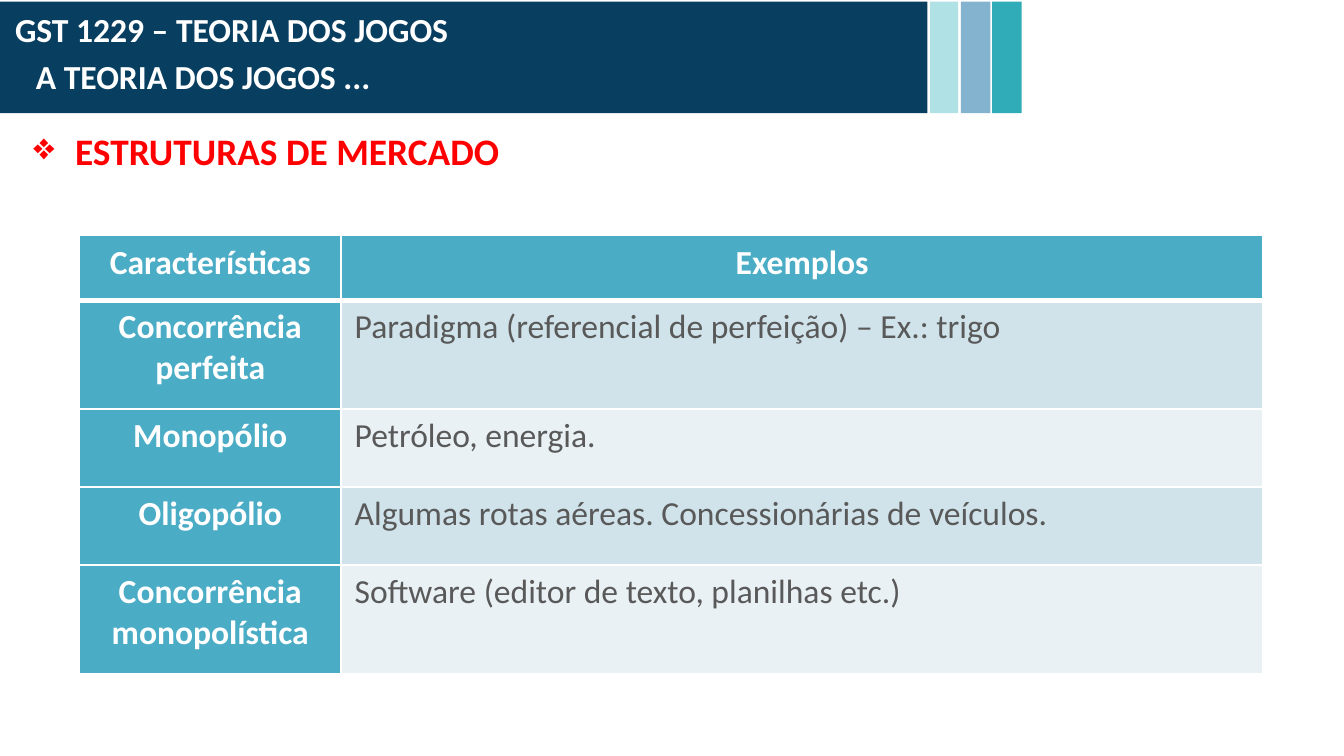
import pptx
import pptx.dml.color
import pptx.enum.shapes
import pptx.enum.text
import pptx.oxml
import pptx.oxml.ns
import pptx.util
from pptx.util import Cm

INK = {
    "navy": "083E5F", "mint": "B0E2E5", "steel": "83B3CF", "teal": "30ACB8",
    "white": "FFFFFF", "red": "FF0000", "gray": "595959",
    "head": "4BACC6", "dark": "D0E3EA", "light": "E9F1F5",
}
BARS = [(-0.05, 17.58, "navy"), (17.58, 0.53, "mint"),
        (18.16, 0.56, "steel"), (18.75, 0.56, "teal")]
ROWS = [
    (1.22, "Características", "Exemplos"),
    (2.06, "Concorrência\nperfeita",
     "Paradigma (referencial de perfeição) – Ex.: trigo"),
    (1.47, "Monopólio", "Petróleo, energia."),
    (1.47, "Oligopólio", "Algumas rotas aéreas. Concessionárias de veículos."),
    (2.06, "Concorrência\nmonopolística",
     "Software (editor de texto, planilhas etc.)"),
]
COLS = [4.95, 17.42]
LEFT = pptx.enum.text.PP_ALIGN.LEFT
MID = pptx.enum.text.PP_ALIGN.CENTER


def tint(name):
    return pptx.dml.color.RGBColor.from_string(INK[name])


def paint(fill, name):
    fill.solid()
    fill.fore_color.rgb = tint(name)


def write(frame, text, ink, size=18, bold=True, align=LEFT):
    frame.text = text
    look = {"name": "Calibri", "size": pptx.util.Pt(size), "bold": bold}
    for para in frame.paragraphs:
        para.alignment = align
        for run in para.runs:
            for key, value in look.items():
                setattr(run.font, key, value)
            run.font.color.rgb = tint(ink)


def place(shape, left, top, width, height):
    spot = {"left": left, "top": top, "width": width, "height": height}
    for key, value in spot.items():
        setattr(shape, key, Cm(value))


def add_bar(slide, left, width, ink):
    kind = pptx.enum.shapes.MSO_SHAPE.RECTANGLE
    bar = slide.shapes.add_shape(kind, Cm(left), Cm(0.03), Cm(width), Cm(2.11))
    bar.shadow.inherit = False
    paint(bar.fill, ink)
    bar.line.fill.background()


def add_title(slide, text):
    title = slide.shapes.title
    slide.shapes._spTree.append(title._element)
    place(title, 0.03, 0.05, 13.03, 1.02)
    frame = title.text_frame
    form = {"word_wrap": True,
            "auto_size": pptx.enum.text.MSO_AUTO_SIZE.NONE,
            "vertical_anchor": pptx.enum.text.MSO_ANCHOR.TOP}
    for key, value in form.items():
        setattr(frame, key, value)
    write(frame, text, "white")


def add_text(slide, spot, text, ink, size=18, wrap=True):
    box = slide.shapes.add_textbox(*map(Cm, spot))
    box.text_frame.word_wrap = wrap
    write(box.text_frame, text, ink, size)
    return box


def add_mark(box, mark):
    props = box.text_frame.paragraphs[0]._p.get_or_add_pPr()
    props.set("marL", str(Cm(0.79)))
    props.set("indent", str(-Cm(0.79)))
    space = pptx.oxml.ns.nsdecls("a")
    props.append(pptx.oxml.parse_xml(f'<a:buChar {space} char="{mark}"/>'))


def add_edge(cell, side, width):
    space = pptx.oxml.ns.nsdecls("a")
    cell._tc.get_or_add_tcPr().append(pptx.oxml.parse_xml(
        f'<a:ln{side} {space} w="{pptx.util.Pt(width)}"><a:solidFill>'
        f'<a:srgbClr val="{INK["white"]}"/></a:solidFill></a:ln{side}>'))


def fill_cell(cell, text, row, col):
    for side in "LRTB":
        thick = (row, side) in ((0, "B"), (1, "T"))
        add_edge(cell, side, 3 if thick else 1)
    if row == 0 or col == 0:
        paint(cell.fill, "head")
        write(cell.text_frame, text, "white", align=MID)
    else:
        paint(cell.fill, "dark" if row % 2 else "light")
        write(cell.text_frame, text, "gray", bold=False)


def add_grid(slide):
    high = sum(row[0] for row in ROWS)
    grid = slide.shapes.add_table(len(ROWS), len(COLS), Cm(1.5), Cm(4.45),
                                  Cm(sum(COLS)), Cm(high)).table
    for col, width in enumerate(COLS):
        grid.columns[col].width = Cm(width)
    for row, (height, *texts) in enumerate(ROWS):
        grid.rows[row].height = Cm(height)
        for col, text in enumerate(texts):
            fill_cell(grid.cell(row, col), text, row, col)


def main():
    deck = pptx.Presentation()
    deck.slide_width, deck.slide_height = Cm(25.4), Cm(14.28)
    slide = deck.slides.add_slide(deck.slide_layouts[5])
    for bar in BARS:
        add_bar(slide, *bar)
    add_title(slide, "GST 1229 – TEORIA DOS JOGOS")
    add_text(slide, (0.43, 0.94, 13.03, 1.02), "A TEORIA DOS JOGOS ...", "white")
    head = add_text(slide, (0.38, 2.29, 9.4, 1.12), "ESTRUTURAS DE MERCADO",
                    "red", 20, False)
    add_mark(head, "❖")
    add_grid(slide)
    deck.save("out.pptx")


if __name__ == "__main__":
    main()
